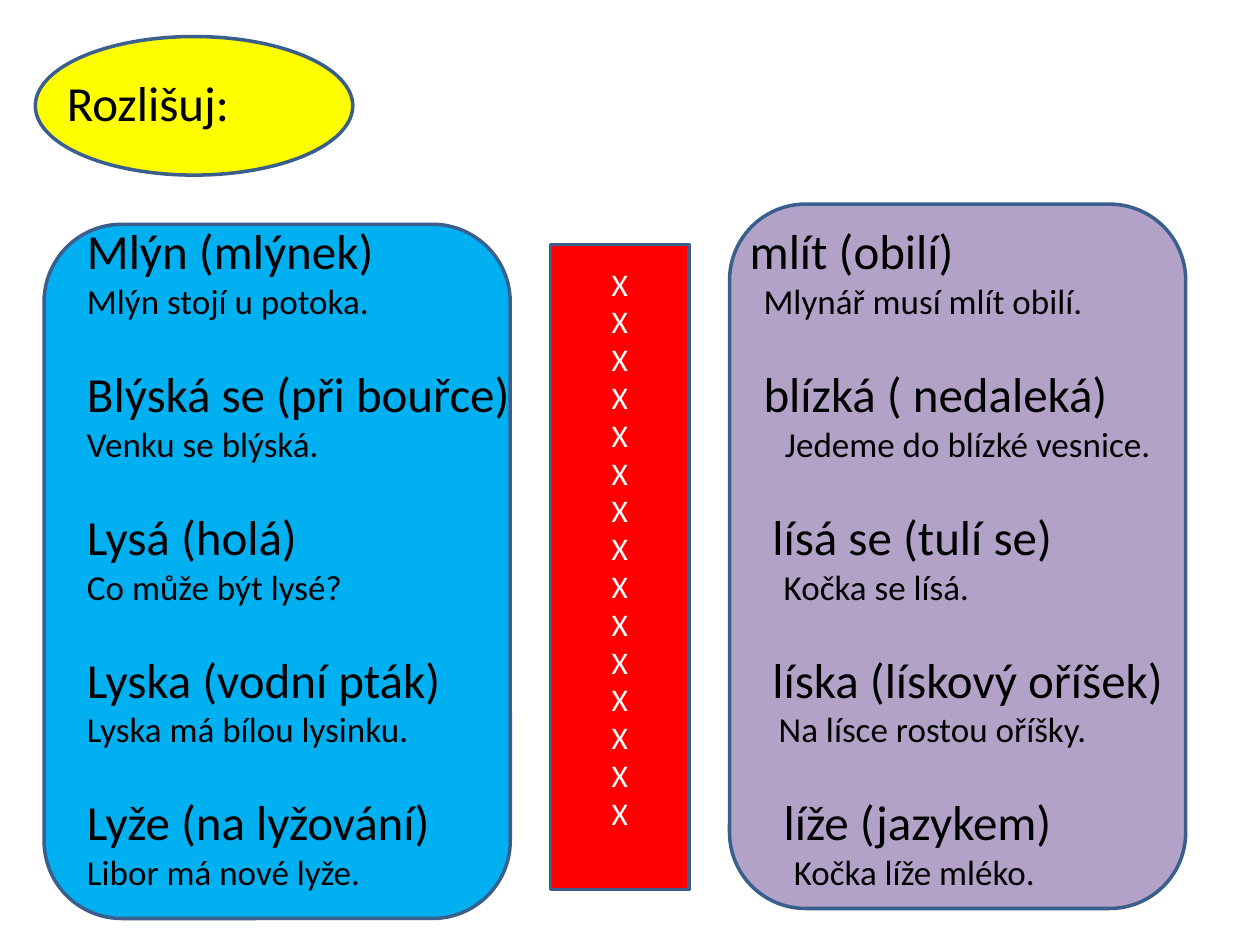
from lxml.etree import SubElement
from pptx import Presentation
from pptx.dml.color import RGBColor
from pptx.enum.shapes import MSO_SHAPE
from pptx.enum.text import MSO_ANCHOR, MSO_AUTO_SIZE, PP_ALIGN
from pptx.oxml.ns import qn
from pptx.util import Inches, Pt

COLORS = {
    "purple": "B3A2C7",
    "blue": "00B0F0",
    "yellow": "FFFF00",
    "red": "FF0000",
    "outline": "3A5F8C",
    "black": "000000",
    "white": "FFFFFF",
}
FONT = "Calibri"
HEADING_SIZE, SENTENCE_SIZE = 28, 20
GROUP_GAP = 24  # about one line of sentence text, in points
MARK_COUNT = 15

# Headings and sentences alternate: (text, indent in inches)
Y_WORDS = [
    ("Mlýn (mlýnek)", 0), ("Mlýn stojí u potoka.", 0),
    ("Blýská se (při bouřce)", 0), ("Venku se blýská.", 0),
    ("Lysá (holá)", 0), ("Co může být lysé?", 0),
    ("Lyska (vodní pták)", 0), ("Lyska má bílou lysinku.", 0),
    ("Lyže (na lyžování)", 0), ("Libor má nové lyže.", 0),
]
I_WORDS = [
    ("mlít (obilí)", 0), ("Mlynář musí mlít obilí.", 0.11),
    ("blízká ( nedaleká)", 0.11), ("Jedeme do blízké vesnice.", 0.28),
    ("lísá se (tulí se)", 0.18), ("Kočka se lísá.", 0.27),
    ("líska (lískový oříšek)", 0.18), ("Na lísce rostou oříšky.", 0.23),
    ("líže (jazykem)", 0.27), ("Kočka líže mléko.", 0.35),
]


def color(name):
    return RGBColor.from_string(COLORS[name])


def add_panel(slide, kind, left, top, width, height, fill):
    shape = slide.shapes.add_shape(
        kind, Inches(left), Inches(top), Inches(width), Inches(height))
    shape.shadow.inherit = False
    shape.fill.solid()
    shape.fill.fore_color.rgb = color(fill)
    shape.line.color.rgb = color("outline")
    shape.line.width = Pt(2)
    return shape


def add_text(paragraph, text, size, color_name="black"):
    run = paragraph.add_run()
    run.text = text
    run.font.name = FONT
    run.font.size = Pt(size)
    run.font.color.rgb = color(color_name)


def place_on_top(placeholder, left, top, width, height, anchor):
    """Position a placeholder and bring it in front of the panels."""
    placeholder.left, placeholder.top = Inches(left), Inches(top)
    placeholder.width, placeholder.height = Inches(width), Inches(height)
    placeholder.element.getparent().append(placeholder.element)
    frame = placeholder.text_frame
    frame.word_wrap = True
    frame.auto_size = MSO_AUTO_SIZE.NONE
    frame.vertical_anchor = anchor
    return frame


def set_plain_indent(paragraph, indent):
    """Remove the bullet and set the left indent."""
    properties = paragraph._p.get_or_add_pPr()
    properties.set("marL", str(Inches(indent)))
    properties.set("indent", "0")
    SubElement(properties, qn("a:buNone"))


def fill_title(slide):
    frame = place_on_top(slide.shapes.title, 0.43, 0.52, 3.07, 0.57, MSO_ANCHOR.MIDDLE)
    paragraph = frame.paragraphs[0]
    paragraph.alignment = PP_ALIGN.LEFT
    add_text(paragraph, "Rozlišuj:", HEADING_SIZE)


def fill_word_column(placeholder, left, words):
    frame = place_on_top(placeholder, left, 1.7, 3.65, 5.6, MSO_ANCHOR.TOP)
    for index, (text, indent) in enumerate(words):
        paragraph = frame.add_paragraph() if index else frame.paragraphs[0]
        set_plain_indent(paragraph, indent)
        is_heading = index % 2 == 0
        paragraph.space_before = Pt(GROUP_GAP if is_heading and index else 0)
        add_text(paragraph, text, HEADING_SIZE if is_heading else SENTENCE_SIZE)


def add_divider(slide):
    divider = add_panel(slide, MSO_SHAPE.RECTANGLE, 4.37, 1.94, 1.1, 5.12, "red")
    frame = divider.text_frame
    frame.vertical_anchor = MSO_ANCHOR.MIDDLE
    frame.margin_bottom = Inches(0.35)
    for index in range(MARK_COUNT):
        paragraph = frame.add_paragraph() if index else frame.paragraphs[0]
        paragraph.alignment = PP_ALIGN.CENTER
        add_text(paragraph, "X", 18, "white")


def main():
    presentation = Presentation()
    presentation.slide_width, presentation.slide_height = Inches(10), Inches(7.5)
    slide = presentation.slides.add_slide(presentation.slide_layouts[3])

    # Coloured panels
    add_panel(slide, MSO_SHAPE.ROUNDED_RECTANGLE, 5.79, 1.62, 3.62, 5.59, "purple")
    add_panel(slide, MSO_SHAPE.ROUNDED_RECTANGLE, 0.35, 1.78, 3.7, 5.51, "blue")
    add_panel(slide, MSO_SHAPE.OVAL, 0.28, 0.29, 2.52, 1.1, "yellow")

    # Title, word columns and the divider between them
    fill_title(slide)
    fill_word_column(slide.placeholders[1], 0.59, Y_WORDS)
    fill_word_column(slide.placeholders[2], 5.85, I_WORDS)
    add_divider(slide)
    presentation.save("out.pptx")


if __name__ == "__main__":
    main()
